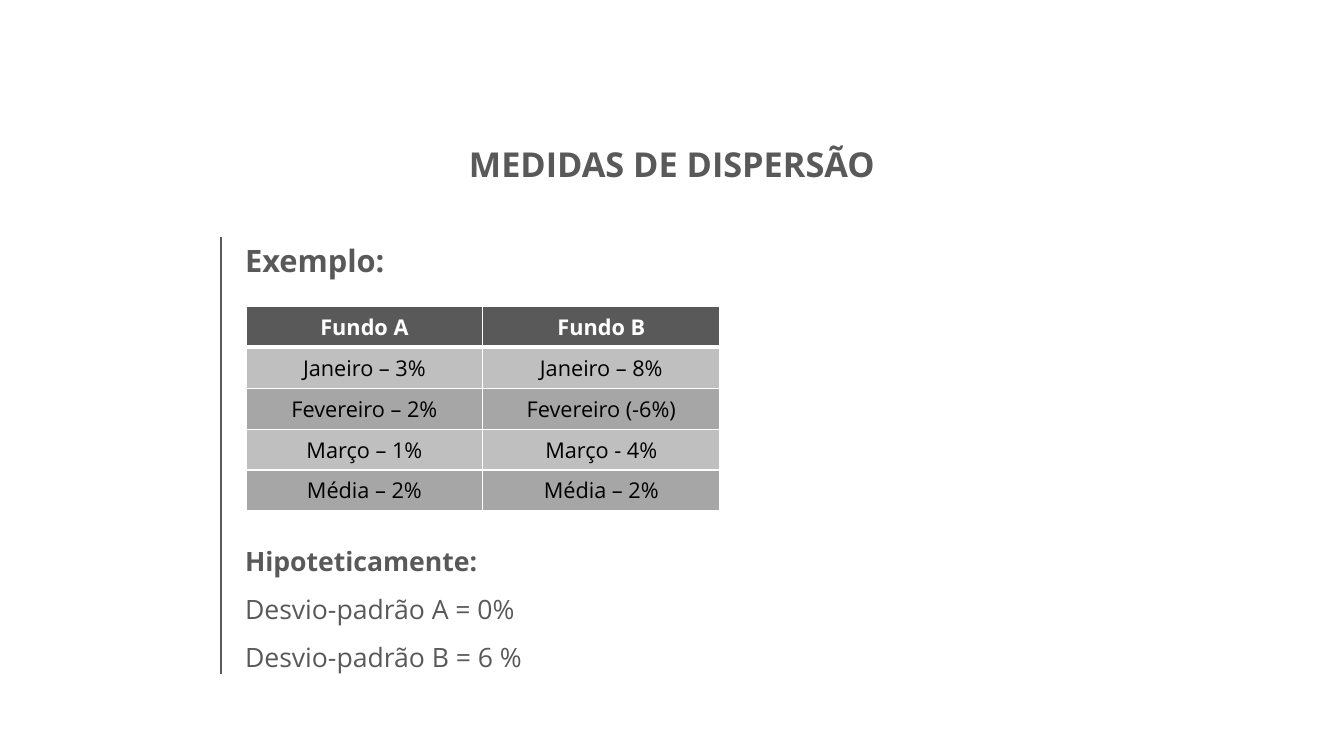
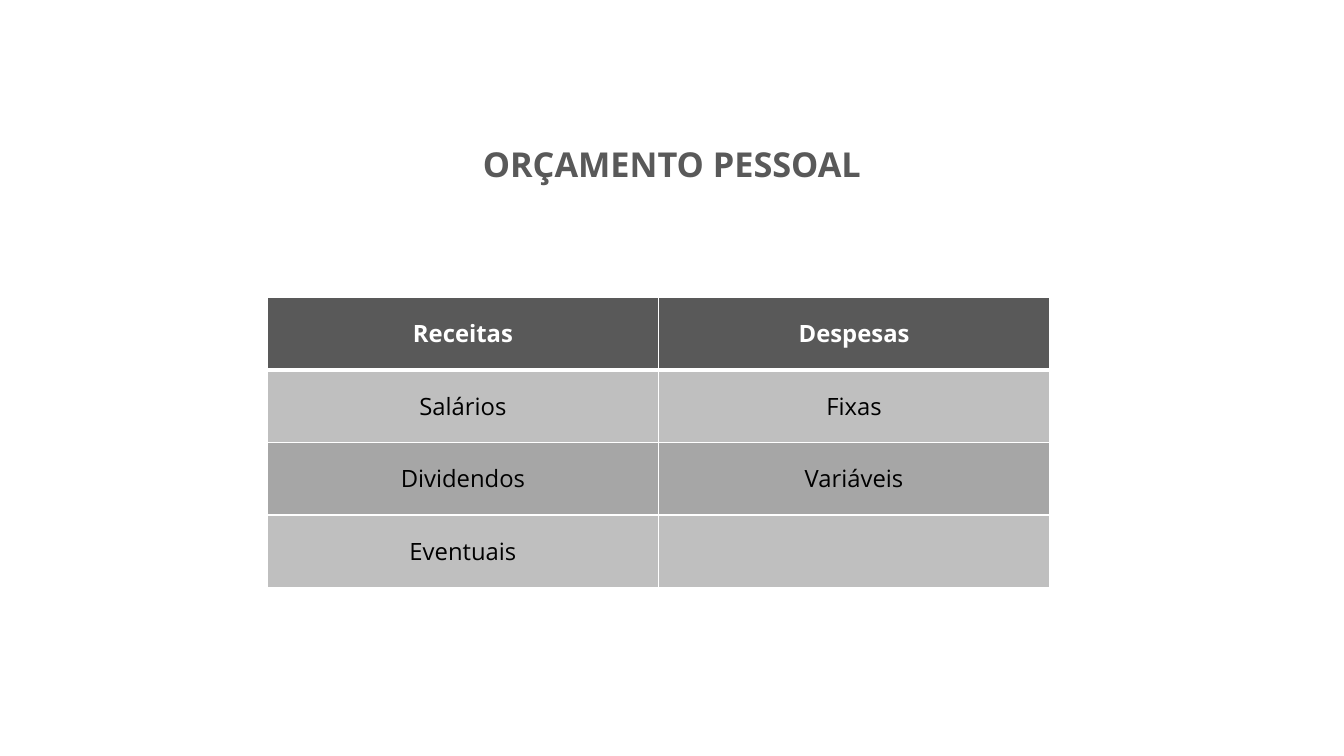
from lxml import etree
from pptx import Presentation
from pptx import util as u
from pptx.dml.color import RGBColor
from pptx.enum import shapes, text
from pptx.oxml.ns import qn

FONT = "Open Sans"
DARK, LIGHT, MEDIUM = "595959", "BFBFBF", "A6A6A6"
WHITE, BLACK = "FFFFFF", "000000"


def colour(value):
    return RGBColor.from_string(value)


class Slides:
    """Shared style and current page; lengths are percentages of the slide."""

    def __init__(self):
        self.deck = Presentation()
        self.deck.slide_width = u.Inches(13.33)
        self.deck.slide_height = u.Inches(7.5)
        self.page = None

    def across(self, share):
        return round(self.deck.slide_width * share / 100)

    def down(self, share):
        return round(self.deck.slide_height * share / 100)

    def area(self, left, top, width, height):
        return self.across(left), self.down(top), self.across(width), self.down(height)

    def add_page(self, title):
        self.page = self.deck.slides.add_slide(self.deck.slide_layouts[6])
        self.add_text((0, 18.27, 100, 6.8), [(title, True)], 24.5,
                      align=text.PP_ALIGN.CENTER)

    def add_span(self, para, words, size, ink, bold):
        span = para.add_run()
        span.text = words
        font = span.font
        font.name, font.size, font.bold = FONT, u.Pt(size), bold
        font.color.rgb = colour(ink)

    def add_text(self, area, lines, size, align=None, spacing=None):
        box = self.page.shapes.add_textbox(*self.area(*area))
        frame = box.text_frame
        frame.word_wrap = True
        for index, (words, bold) in enumerate(lines):
            para = frame.add_paragraph() if index else frame.paragraphs[0]
            para.alignment = align
            para.line_spacing = spacing
            self.add_span(para, words, size, DARK, bold)

    def add_rule(self, left, top, bottom):
        x = self.across(left)
        rule = self.page.shapes.add_connector(
            shapes.MSO_CONNECTOR.STRAIGHT, x, self.down(top), x, self.down(bottom))
        rule.line.color.rgb = colour(DARK)
        rule.line.width = u.Pt(1.5)
        etree.SubElement(rule._element.spPr, qn("a:effectLst"))

    def add_borders(self, cell, top, bottom):
        properties = cell._tc.get_or_add_tcPr()
        for side, points in (("L", 1), ("R", 1), ("T", top), ("B", bottom)):
            line = etree.SubElement(properties, qn(f"a:ln{side}"), w=str(u.Pt(points)))
            fill = etree.SubElement(line, qn("a:solidFill"))
            etree.SubElement(fill, qn("a:srgbClr"), val=WHITE)

    def add_table(self, area, rows, size):
        table = self.page.shapes.add_table(len(rows), len(rows[0]), *self.area(*area)).table
        table.horz_banding = False
        for r, row in enumerate(rows):
            header = r == 0
            for c, words in enumerate(row):
                cell = table.cell(r, c)
                # A thick rule separates the header from the body
                self.add_borders(cell, 3 if r == 1 else 1, 3 if header else 1)
                cell.fill.solid()
                cell.fill.fore_color.rgb = colour(
                    DARK if header else LIGHT if r % 2 else MEDIUM)
                cell.vertical_anchor = text.MSO_ANCHOR.MIDDLE
                para = cell.text_frame.paragraphs[0]
                para.alignment = text.PP_ALIGN.CENTER
                if words:
                    self.add_span(para, words, size, WHITE if header else BLACK, header)


def main():
    slides = Slides()

    # Measures of dispersion
    slides.add_page("MEDIDAS DE DISPERSÃO")
    slides.add_rule(16.45, 31.33, 89.2)
    slides.add_text((17.5, 31.33, 68, 6.27), [("Exemplo:", True)], 22)
    slides.add_table((18.3, 40.53, 35.25, 27.07), [
        ("Fundo A", "Fundo B"),
        ("Janeiro – 3%", "Janeiro – 8%"),
        ("Fevereiro – 2%", "Fevereiro (-6%)"),
        ("Março – 1%", "Março - 4%"),
        ("Média – 2%", "Média – 2%"),
    ], 15.5)
    slides.add_text((17.5, 69.33, 68, 19.87), [
        ("Hipoteticamente:", True),
        ("Desvio-padrão A = 0%", False),
        ("Desvio-padrão B = 6 %", False),
    ], 19, spacing=1.5)

    # Personal budget
    slides.add_page("ORÇAMENTO PESSOAL")
    slides.add_table((19.9, 39.33, 58.2, 38.4), [
        ("Receitas", "Despesas"),
        ("Salários", "Fixas"),
        ("Dividendos", "Variáveis"),
        ("Eventuais", ""),
    ], 17)

    slides.deck.save("out.pptx")


if __name__ == "__main__":
    main()
